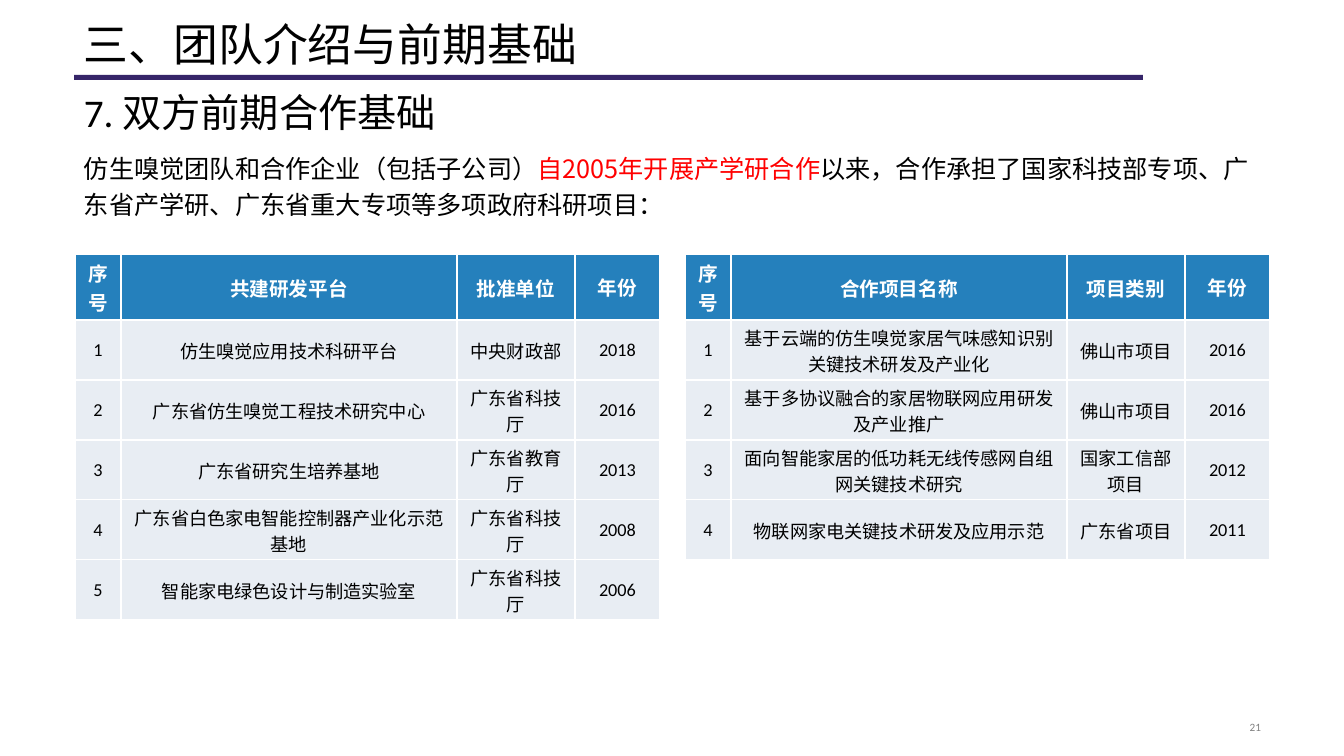
import pptx
import pptx.util
import pptx.dml.color
import pptx.enum.shapes
import pptx.enum.text
import pptx.oxml.ns
from lxml import etree

RGBColor = pptx.dml.color.RGBColor
ALIGN = pptx.enum.text.PP_ALIGN
ANCHOR = pptx.enum.text.MSO_ANCHOR

WHITE = RGBColor(0xFF, 0xFF, 0xFF)
BLACK = RGBColor(0, 0, 0)
RED = RGBColor(0xFF, 0, 0)
GRAY = RGBColor(0x80, 0x80, 0x80)
PURPLE = RGBColor(0x36, 0x25, 0x69)
BLUE = RGBColor(0x25, 0x80, 0xBC)
PALE = RGBColor(0xE8, 0xED, 0xF3)

SLIDE_WIDTH, SLIDE_HEIGHT = 1344, 756
EMU_PER_PX = 12192000 / SLIDE_WIDTH
LEFT, CONTENT_WIDTH = 74, 1197
TABLE_TOP = 254
COLUMN_WIDTHS = [46, 336, 118, 85]
HEADER_HEIGHT, ROW_HEIGHT = 66, 60

PLATFORMS = [
    ("序号", "共建研发平台", "批准单位", "年份"),
    ("1", "仿生嗅觉应用技术科研平台", "中央财政部", "2018"),
    ("2", "广东省仿生嗅觉工程技术研究中心", "广东省科技厅", "2016"),
    ("3", "广东省研究生培养基地", "广东省教育厅", "2013"),
    ("4", "广东省白色家电智能控制器产业化示范基地", "广东省科技厅", "2008"),
    ("5", "智能家电绿色设计与制造实验室", "广东省科技厅", "2006"),
]
PROJECTS = [
    ("序号", "合作项目名称", "项目类别", "年份"),
    ("1", "基于云端的仿生嗅觉家居气味感知识别关键技术研发及产业化", "佛山市项目", "2016"),
    ("2", "基于多协议融合的家居物联网应用研发及产业推广", "佛山市项目", "2016"),
    ("3", "面向智能家居的低功耗无线传感网自组网关键技术研究", "国家工信部项目", "2012"),
    ("4", "物联网家电关键技术研发及应用示范", "广东省项目", "2011"),
]


def px(length):
    return pptx.util.Emu(round(length * EMU_PER_PX))


class SlideBuilder:
    """Holds the slide being filled and its fonts."""

    latin_font = "Calibri"
    chinese_font = "Noto Sans CJK SC"

    def __init__(self, slide):
        self.slide = slide

    def format_run(self, run, size, color, bold=False, font=None):
        run.font.size = pptx.util.Pt(size)
        run.font.bold = bold
        run.font.color.rgb = color
        run.font.name = font or self.latin_font
        east_asian = etree.SubElement(run.font._element, pptx.oxml.ns.qn("a:ea"))
        east_asian.set("typeface", self.chinese_font)

    def bar(self, left, top, width, height, color):
        shape = self.slide.shapes.add_shape(
            pptx.enum.shapes.MSO_SHAPE.RECTANGLE, px(left), px(top), px(width), px(height))
        shape.shadow.inherit = False
        shape.fill.solid()
        shape.fill.fore_color.rgb = color
        shape.line.fill.background()

    def text(self, box, parts, size, font=None, anchor=ANCHOR.MIDDLE,
             align=ALIGN.LEFT, line_spacing=1.0):
        """Adds one paragraph made of (wording, colour) parts."""
        shape = self.slide.shapes.add_textbox(*map(px, box))
        frame = shape.text_frame
        frame.word_wrap = True
        frame.vertical_anchor = anchor
        paragraph = frame.paragraphs[0]
        paragraph.alignment = align
        paragraph.line_spacing = line_spacing
        for wording, color in parts:
            run = paragraph.add_run()
            run.text = wording
            self.format_run(run, size, color, font=font)

    def border(self, cell):
        """Draws thin white lines; call it before the cell gets its fill."""
        properties = cell._tc.get_or_add_tcPr()
        for side in ("lnL", "lnR", "lnT", "lnB"):
            line = etree.SubElement(properties, pptx.oxml.ns.qn("a:" + side), w="12700")
            fill = etree.SubElement(line, pptx.oxml.ns.qn("a:solidFill"))
            etree.SubElement(fill, pptx.oxml.ns.qn("a:srgbClr"), val=str(WHITE))

    def cell(self, cell, wording, is_header, is_year):
        side, top = (0, 0) if is_year else (6, 1)
        cell.margin_left = cell.margin_right = px(side)
        cell.margin_top, cell.margin_bottom = px(top), 0
        cell.vertical_anchor = ANCHOR.MIDDLE
        self.border(cell)
        cell.fill.solid()
        cell.fill.fore_color.rgb = BLUE if is_header else PALE
        cell.text_frame.text = wording
        paragraph = cell.text_frame.paragraphs[0]
        paragraph.alignment = ALIGN.CENTER
        self.format_run(paragraph.runs[0], 14 if is_header else 13,
                        WHITE if is_header else BLACK, bold=is_header)

    def table(self, left, top, rows):
        heights = [HEADER_HEIGHT] + [ROW_HEIGHT] * (len(rows) - 1)
        table = self.slide.shapes.add_table(
            len(rows), len(COLUMN_WIDTHS), px(left), px(top),
            px(sum(COLUMN_WIDTHS)), px(sum(heights))).table
        table.horz_banding = False
        for column, width in zip(table.columns, COLUMN_WIDTHS):
            column.width = px(width)
        for row_index, (row, height) in enumerate(zip(rows, heights)):
            table.rows[row_index].height = px(height)
            for column_index, wording in enumerate(row):
                self.cell(table.cell(row_index, column_index), wording,
                          row_index == 0, column_index == len(row) - 1)


def main():
    presentation = pptx.Presentation()
    presentation.slide_width = px(SLIDE_WIDTH)
    presentation.slide_height = px(SLIDE_HEIGHT)
    builder = SlideBuilder(presentation.slides.add_slide(presentation.slide_layouts[6]))

    builder.bar(LEFT, 75, 1069, 5, PURPLE)
    builder.text((LEFT, 142, CONTENT_WIDTH, 89), [
        ("仿生嗅觉团队和合作企业（包括子公司）", BLACK),
        ("自2005年开展产学研合作", RED),
        ("以来，合作承担了国家科技部专项、广东省产学研、广东省重大专项等多项政府科研项目：", BLACK),
    ], 18, font=builder.chinese_font, anchor=ANCHOR.TOP, line_spacing=1.2)
    builder.text((LEFT, 0, CONTENT_WIDTH, 76), [("三、团队介绍与前期基础", BLACK)], 32,
                 anchor=ANCHOR.BOTTOM, line_spacing=0.9)
    builder.text((950, 716, 321, 23), [("21", GRAY)], 8, align=ALIGN.RIGHT)
    builder.text((LEFT, 87, CONTENT_WIDTH, 55), [("7. 双方前期合作基础", BLACK)], 28,
                 line_spacing=0.9)
    builder.table(75, TABLE_TOP, PLATFORMS)
    builder.table(685, TABLE_TOP, PROJECTS)

    presentation.save("out.pptx")


if __name__ == "__main__":
    main()
